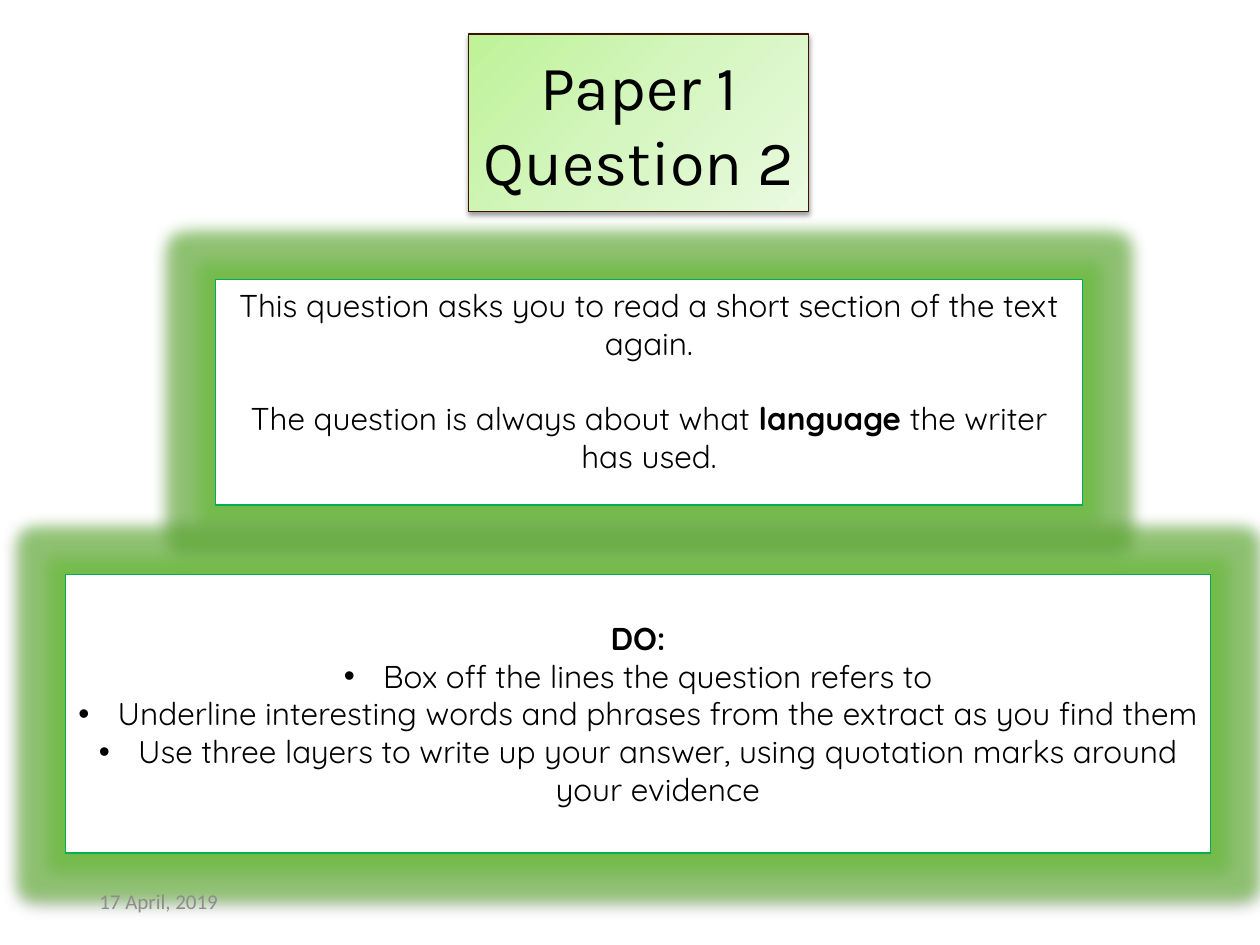
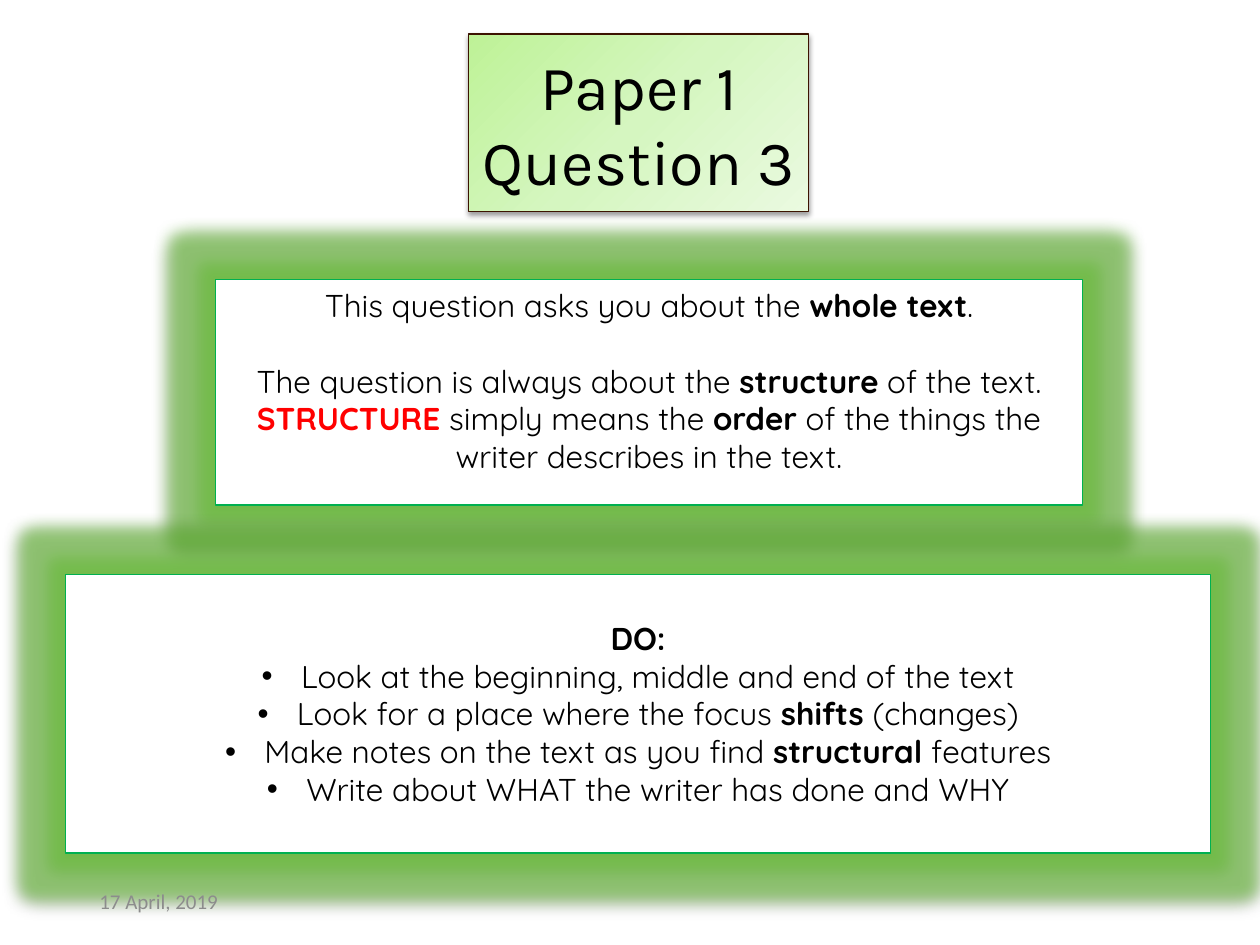
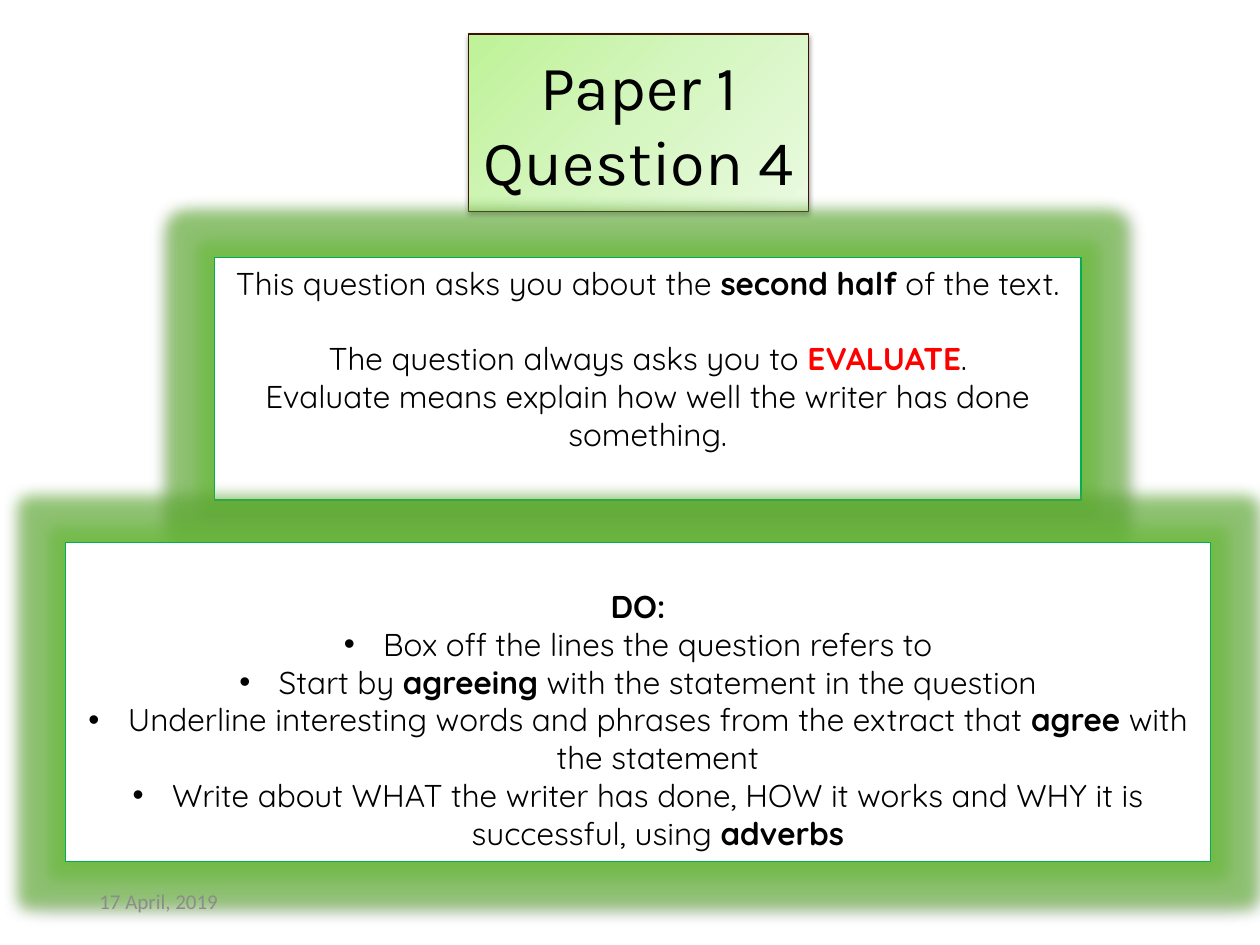
from copy import deepcopy

from lxml import etree
from pptx import Presentation
from pptx import util as u
from pptx.dml.color import RGBColor
from pptx.enum import shapes, text
from pptx.oxml.ns import qn

HUES = {
    "ink": "000000", "key": "FF0000", "paper": "FFFFFF", "edge": "00B050",
    "glow": "6ABF3A", "brown": "3C1301", "date": "8C8C8C",
    "deep": "BEF297", "mid": "D5F6C0", "pale": "EAFAE0",
}
GAP = 21.7
ASK = (123.1, 159.8, 495.4, 128.9)
TASK = (37.4, 328.3, 654.5, 159.1)

PAGES = [
    (2, ASK, [
        ("This question asks you to read a short section of the text again.", 0),
        ("The question is always about what *language *the writer has used.", GAP),
    ], TASK, [
        "Box off the lines the question refers to",
        "Underline interesting words and phrases from the extract as you find them",
        "Use three layers to write up your answer, using quotation marks around your evidence",
    ]),
    (3, ASK, [
        ("This question asks you about the *whole text*.", 0),
        ("The question is always about the *structure* of the text. *!STRUCTURE* simply means "
         "the *order* of the things the writer describes in the text.", GAP),
    ], TASK, [
        "Look at the beginning, middle and end of the text",
        "Look for a place where the focus *shifts *(changes)",
        "Make notes on the text as you find *structural *features",
        "Write about WHAT the writer has done and WHY",
    ]),
    (4, (122.4, 147.1, 495.4, 138.7), [
        ("This question asks you about the *second half *of the text.", 0),
        ("The question always asks you to *!EVALUATE*.", GAP),
        ("Evaluate means explain how well the writer has done something.", 0),
    ], (37.4, 310.1, 654.5, 182), [
        "Box off the lines the question refers to",
        "Start by *agreeing* with the statement in the question",
        "Underline interesting words and phrases from the extract that *agree* with the statement",
        "Write about WHAT the writer has done, HOW it works and WHY it is successful, "
        "using *adverbs*",
    ]),
]


def hue(name):
    return RGBColor.from_string(HUES[name])


def write(para, words, font="Quicksand", size=18, color="ink", center=True, before=0,
          bullet=False):
    if bullet:
        props = para._p.get_or_add_pPr()
        props.set("marL", str(u.Pt(22.5)))
        props.set("indent", str(-u.Pt(22.5)))
        etree.SubElement(props, qn("a:buFont"), typeface="Arial")
        etree.SubElement(props, qn("a:buChar"), char="•")
    para.alignment = text.PP_ALIGN.CENTER if center else text.PP_ALIGN.LEFT
    if before:
        para.space_before = u.Pt(before)
    for i, part in enumerate(words.split("*")):
        if part:
            run = para.add_run()
            run.text = part.lstrip("!")
            run.font.name, run.font.size = font, u.Pt(size)
            run.font.bold = i % 2 == 1
            run.font.color.rgb = hue("key" if part.startswith("!") else color)


class Deck:
    def __init__(self):
        self.show = Presentation()
        self.show.slide_width, self.show.slide_height = u.Pt(720), u.Pt(540)

    def page(self):
        self.slide = self.show.slides.add_slide(self.show.slide_layouts[5])

    def tint(self, node, kind, color, alpha, **attrs):
        effect = etree.SubElement(node, qn("a:" + kind), attrs)
        shade = etree.SubElement(effect, qn("a:srgbClr"), val=HUES[color])
        etree.SubElement(shade, qn("a:alpha"), val=str(alpha * 1000))

    def trim(self, shape, color, glow=False):
        shape.line.color.rgb = hue(color)
        shape.line.width = u.Pt(0.75)
        shape.shadow.inherit = False
        node = shape.element.spPr.find(qn("a:effectLst"))
        if glow:
            self.tint(node, "glow", "glow", 60, rad=str(u.Pt(18)))
        self.tint(node, "outerShdw", "ink", 38, blurRad=str(u.Pt(3.1)),
                  dist=str(u.Pt(1.6)), dir="5400000", rotWithShape="0")

    def fill(self, frame, lines):
        for i, (words, style) in enumerate(lines):
            write(frame.paragraphs[0] if i == 0 else frame.add_paragraph(), words, **style)

    def title(self, number):
        shape = self.slide.shapes.title
        shape.left, shape.top, shape.width, shape.height = map(u.Pt, (267.8, 19.4, 194.4, 101.5))
        shape.fill.gradient()
        shape.fill.gradient_angle = 315
        stops = shape.element.spPr.find(".//" + qn("a:gsLst"))
        stops.insert(1, deepcopy(stops[0]))
        for i, (stop, name) in enumerate(zip(shape.fill.gradient_stops, ("deep", "mid", "pale"))):
            stop.color.rgb = hue(name)
            stop.position = i / 2
        self.trim(shape, "brown")
        frame = shape.text_frame
        frame.auto_size = text.MSO_AUTO_SIZE.NONE
        frame.word_wrap = False
        frame.vertical_anchor = text.MSO_ANCHOR.MIDDLE
        style = {"font": "Karla", "size": 36}
        self.fill(frame, [("Paper 1", style), (f"Question {number}", style)])

    def panel(self, box, lines, inset=3.6):
        shape = self.slide.shapes.add_shape(shapes.MSO_SHAPE.RECTANGLE, *map(u.Pt, box))
        shape.fill.solid()
        shape.fill.fore_color.rgb = hue("paper")
        self.trim(shape, "edge", glow=True)
        frame = shape.text_frame
        frame.word_wrap = True
        frame.vertical_anchor = text.MSO_ANCHOR.TOP
        frame.margin_top = u.Pt(inset)
        self.fill(frame, lines)

    def date(self):
        box = self.slide.shapes.add_textbox(*map(u.Pt, (49.7, 500.4, 162, 28.8)))
        frame = box.text_frame
        frame.word_wrap = True
        frame.vertical_anchor = text.MSO_ANCHOR.MIDDLE
        style = {"font": "Calibri", "size": 12, "color": "date", "center": False}
        self.fill(frame, [("17 April, 2019", style)])


def main():
    deck = Deck()
    for number, ask, facts, task, steps in PAGES:
        deck.page()
        deck.title(number)
        deck.panel(ask, [(words, {"before": gap}) for words, gap in facts])
        deck.panel(task, [("*DO:*", {})] + [(step, {"bullet": True}) for step in steps],
                   inset=25.3)
        deck.date()
    deck.show.save("out.pptx")


if __name__ == "__main__":
    main()
